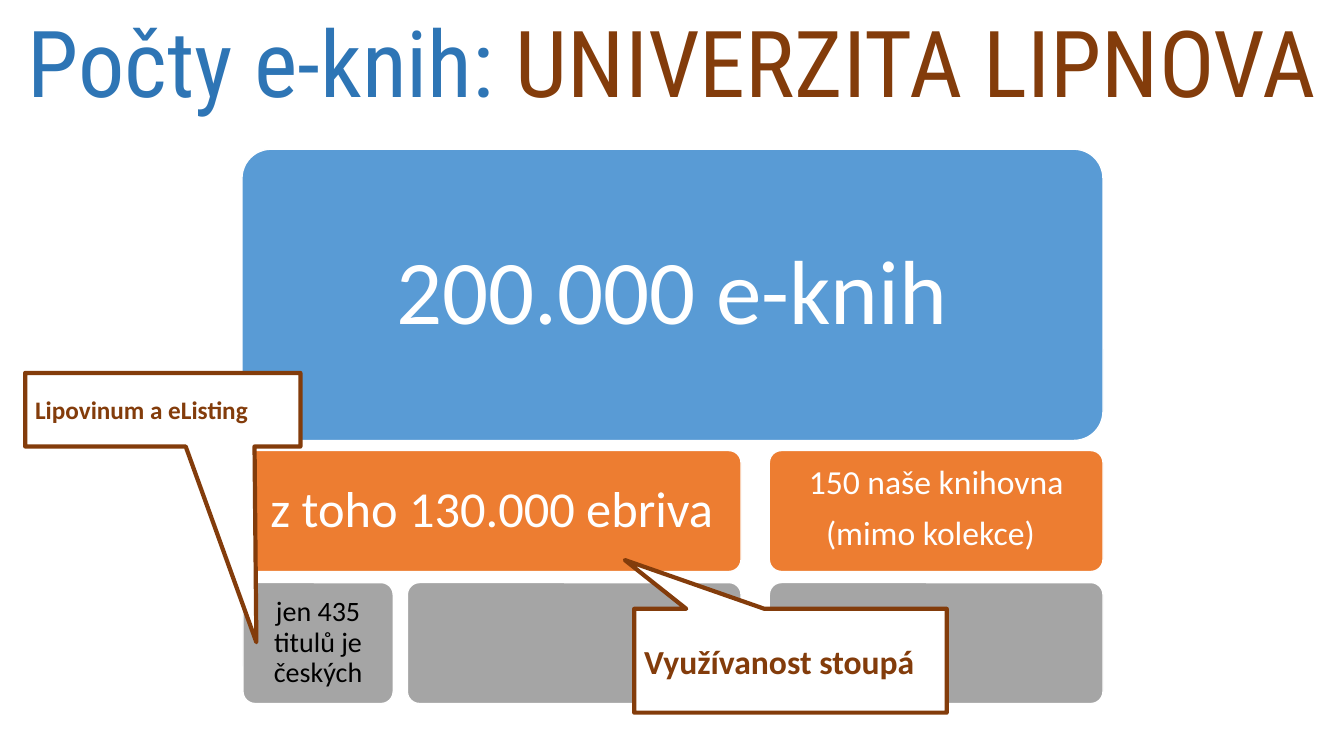
from pptx import Presentation
from pptx.dml.color import RGBColor
from pptx.enum.shapes import MSO_SHAPE
from pptx.enum.text import MSO_ANCHOR, PP_ALIGN
from pptx.util import Inches, Pt

COLORS = {
    "title": "2E75B5",
    "brown": "833C0B",
    "blue": "599BD5",
    "orange": "ED7D31",
    "gray": "A5A5A5",
    "white": "FFFFFF",
    "black": "000000",
}


def add_run(p, text, size, color, font="Calibri", bold=False):
    r = p.add_run()
    r.text = text
    r.font.name = font
    r.font.size = Pt(size)
    r.font.bold = bold
    r.font.color.rgb = RGBColor.from_string(COLORS[color])


def add_box(kind, box, adjustments, fill, line, line_width, inset):
    """Add a filled, outlined shape and return its first paragraph."""
    sp = s.shapes.add_shape(kind, *[Inches(v) for v in box])
    sp.shadow.inherit = False
    for i, value in enumerate(adjustments):
        sp.adjustments[i] = value
    sp.fill.solid()
    sp.fill.fore_color.rgb = RGBColor.from_string(COLORS[fill])
    sp.line.color.rgb = RGBColor.from_string(COLORS[line])
    sp.line.width = Pt(line_width)
    tf = sp.text_frame
    tf.word_wrap = True
    tf.vertical_anchor = MSO_ANCHOR.MIDDLE
    tf.margin_left = tf.margin_right = Inches(inset[0])
    tf.margin_top = tf.margin_bottom = Inches(inset[1])
    return tf.paragraphs[0]


prs = Presentation()
prs.slide_width = Inches(13.33)
prs.slide_height = Inches(7.5)
s = prs.slides.add_slide(prs.slide_layouts[6])

# Title
title = s.shapes.add_textbox(0, 0, prs.slide_width, Inches(1.21))
title.text_frame.word_wrap = True
p = title.text_frame.paragraphs[0]
p.alignment = PP_ALIGN.CENTER
add_run(p, "Počty e-knih: ", 66, "title", "Roboto Condensed")
add_run(p, "UNIVERZITA LIPNOVA", 66, "brown", "Roboto Condensed")

# Hierarchy: box, fill, inset, space after, runs of (text, size, color)
ROW_2, ROW_3, ROW_H = 4.47, 5.78, 1.2
LEFT, RIGHT, RIGHT_W = 2.41, 7.63, 3.31
hierarchy = [
    ((2.4, 1.48, 8.54, 2.89), "blue", 0.36, 22.8,
     [("200.000 e-knih", 65, "white")]),
    ((LEFT, ROW_2, 4.94, ROW_H), "orange", 0.19, 12.6,
     [("z toho 130.000 ebriva ", 36, "white")]),
    ((LEFT, ROW_3, 1.49, ROW_H), "gray", 0.11, 7,
     [("jen 435 titulů je českých", 20, "black")]),
    ((4.04, ROW_3, RIGHT_W, ROW_H), "gray", 0.11, 7, []),
    ((RIGHT, ROW_2, RIGHT_W, ROW_H), "orange", 0.19, 12.6,
     [("150 naše knihovna (mimo kolekce)", 24, "white"), (" ", 36, "white")]),
    ((RIGHT, ROW_3, RIGHT_W, ROW_H), "gray", 0.11, 7, []),
]
for box, fill, inset, space_after, runs in hierarchy:
    p = add_box(MSO_SHAPE.ROUNDED_RECTANGLE, box, [0.1], fill, "white", 1,
                (inset, inset))
    p.alignment = PP_ALIGN.CENTER
    p.line_spacing = 0.9
    p.space_after = Pt(space_after)
    for text, size, color in runs:
        add_run(p, text, size, color)

# Callouts
callouts = [
    ((6.29, 6.04, 3.1, 1.03), (-0.53, -0.97), "Využívanost stoupá", 24),
    ((0.25, 3.7, 2.73, 0.73), (0.34, 3.16), "Lipovinum a eListing", 18),
]
for box, pointer, text, size in callouts:
    p = add_box(MSO_SHAPE.RECTANGULAR_CALLOUT, box, pointer, "white", "brown",
                3, (0.1, 0.05))
    p.alignment = PP_ALIGN.LEFT
    add_run(p, text, size, "brown", bold=True)

prs.save("out.pptx")
